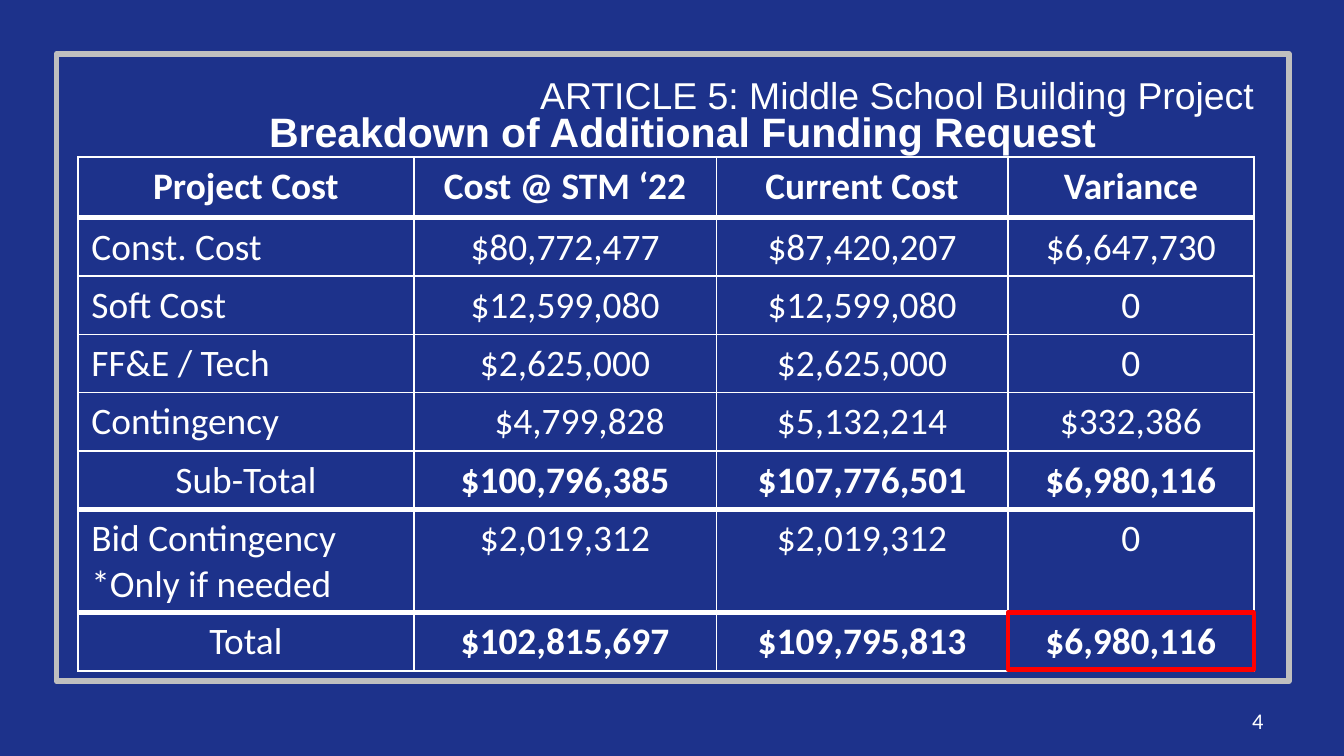
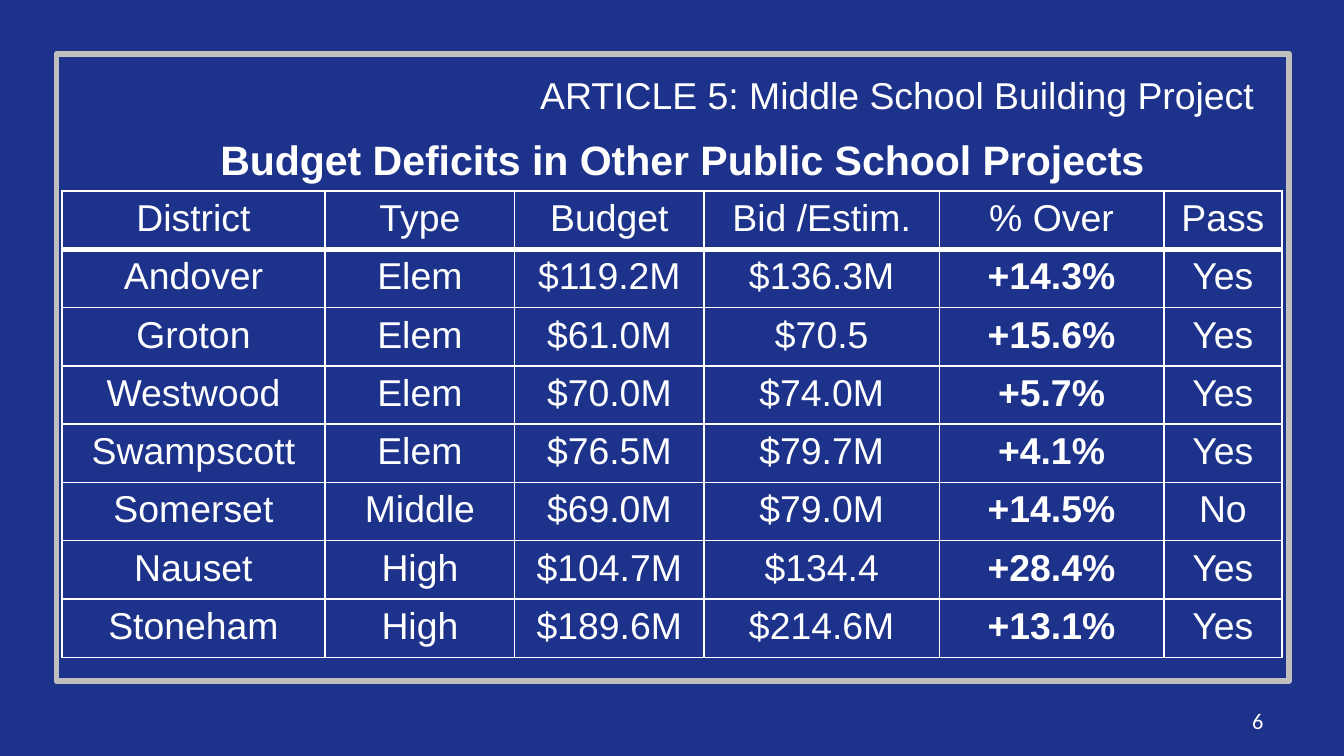
from dataclasses import dataclass
from typing import NamedTuple

from lxml.etree import SubElement
from pptx import Presentation
from pptx.dml.color import RGBColor
from pptx.enum.shapes import MSO_SHAPE
from pptx.enum.text import MSO_ANCHOR, PP_ALIGN
from pptx.oxml.ns import qn
from pptx.slide import Slide
from pptx.table import _Cell
from pptx.util import Inches, Pt

COLORS = {"navy": "1D328B", "white": "FFFFFF", "frame": "BFBFBF", "red": "FF0000"}
ARTICLE = "ARTICLE 5: Middle School Building Project"
THIN, THICK = Pt(1), Pt(3)


class Box(NamedTuple):
    left: float
    top: float
    width: float
    height: float


class TextStyle(NamedTuple):
    font: str
    size: int
    bold: bool = False
    align: PP_ALIGN = PP_ALIGN.CENTER
    anchor: MSO_ANCHOR = MSO_ANCHOR.MIDDLE


TITLE = TextStyle("Arial", 22, bold=True)
ARTICLE_STYLE = TextStyle("Arial", 20, align=PP_ALIGN.LEFT, anchor=MSO_ANCHOR.TOP)
NUMBER = TextStyle("Calibri", 12, align=PP_ALIGN.RIGHT)


@dataclass(frozen=True)
class TableSpec:
    left: float
    top: float
    columns: list[float]
    heights: list[float]
    rows: list[list[str]]
    font: str
    thick_below: frozenset[int] = frozenset({0})  # rows with a heavy bottom rule
    bold_cells: frozenset[tuple[int, int]] = frozenset()
    left_cells: frozenset[tuple[int, int]] = frozenset()
    indented_cells: frozenset[tuple[int, int]] = frozenset()


@dataclass(frozen=True)
class PageSpec:
    number: int
    title: str
    title_top: float
    table: TableSpec
    highlight: Box | None = None


def color(name: str) -> RGBColor:
    return RGBColor.from_string(COLORS[name])


def add_outline(page: Slide, box: Box, line_color: str, width: float) -> None:
    outline = page.shapes.add_shape(MSO_SHAPE.RECTANGLE, *map(Inches, box))
    outline.shadow.inherit = False
    outline.fill.background()
    outline.line.color.rgb = color(line_color)
    outline.line.width = Pt(width)


def write(frame, text: str, style: TextStyle) -> None:
    frame.text = text
    for para in frame.paragraphs:
        para.alignment = style.align
        para.font.name = style.font
        para.font.size = Pt(style.size)
        para.font.bold = style.bold
        para.font.color.rgb = color("white")


def add_text(page: Slide, box: Box, text: str, style: TextStyle) -> None:
    frame = page.shapes.add_textbox(*map(Inches, box)).text_frame
    frame.word_wrap = True
    frame.vertical_anchor = style.anchor
    write(frame, text, style)


def set_borders(cell: _Cell, top: int, bottom: int) -> None:
    properties = cell._tc.get_or_add_tcPr()
    for side, width in (("L", THIN), ("R", THIN), ("T", top), ("B", bottom)):
        line = SubElement(properties, qn(f"a:ln{side}"), w=str(width))
        fill = SubElement(line, qn("a:solidFill"))
        SubElement(fill, qn("a:srgbClr"), val=COLORS["white"])


def add_table(page: Slide, spec: TableSpec) -> None:
    box = Box(spec.left, spec.top, sum(spec.columns), sum(spec.heights))
    table = page.shapes.add_table(
        len(spec.rows), len(spec.columns), *map(Inches, box)).table
    table.first_row = table.horz_banding = False
    for column, width in zip(table.columns, spec.columns):
        column.width = Inches(width)
    for row, height in zip(table.rows, spec.heights):
        row.height = Inches(height)

    for r, values in enumerate(spec.rows):
        top = THICK if r - 1 in spec.thick_below else THIN
        bottom = THICK if r in spec.thick_below else THIN
        for c, value in enumerate(values):
            cell = table.cell(r, c)
            to_left = (r, c) in spec.left_cells | spec.indented_cells
            align = PP_ALIGN.LEFT if to_left else PP_ALIGN.CENTER
            bold = (r, c) in spec.bold_cells
            write(cell.text_frame, value, TextStyle(spec.font, 20, bold, align))
            if (r, c) in spec.indented_cells:
                para = cell.text_frame.paragraphs[0]
                para._p.get_or_add_pPr().set("marL", str(Inches(0.5)))
            set_borders(cell, top, bottom)
            cell.fill.background()


def add_page(deck, spec: PageSpec) -> None:
    page = deck.slides.add_slide(deck.slide_layouts[6])
    add_outline(page, Box(0.42, 0.4, 9.17, 4.67), "frame", 3)
    add_text(page, Box(0.83, spec.title_top, 8.5, 0.53), spec.title, TITLE)
    add_text(page, Box(7.17, 5.21, 2.33, 0.3), str(spec.number), NUMBER)
    add_text(page, Box(3.92, 0.49, 5.58, 0.44), ARTICLE, ARTICLE_STYLE)
    add_table(page, spec.table)
    if spec.highlight:
        add_outline(page, spec.highlight, "red", 2.5)


# Project costs: header and sums are bold, item names sit left
COSTS = TableSpec(
    left=0.58, top=1.17, font="Calibri",
    columns=[2.5, 2.25, 2.17, 1.83],
    heights=[0.45] + [0.43] * 5 + [0.76, 0.43],
    rows=[
        ["Project Cost", "Cost @ STM ‘22", "Current Cost", "Variance"],
        ["Const. Cost", "$80,772,477", "$87,420,207", "$6,647,730"],
        ["Soft Cost", "$12,599,080", "$12,599,080", "0"],
        ["FF&E / Tech", "$2,625,000", "$2,625,000", "0"],
        ["Contingency", "$4,799,828", "$5,132,214", "$332,386"],
        ["Sub-Total", "$100,796,385", "$107,776,501", "$6,980,116"],
        ["Bid Contingency\n*Only if needed", "$2,019,312", "$2,019,312", "0"],
        ["Total", "$102,815,697", "$109,795,813", "$6,980,116"],
    ],
    thick_below=frozenset({0, 5, 6}),
    bold_cells=frozenset({(0, 0)} | {(r, c) for r in (0, 5, 7) for c in (1, 2, 3)}),
    left_cells=frozenset((r, 0) for r in (1, 2, 3, 4, 6)),
    indented_cells=frozenset({(4, 1)}),
)

# Other districts: the overrun column is bold below its header
DISTRICTS = TableSpec(
    left=0.46, top=1.42, font="Arial",
    columns=[1.96, 1.41, 1.41, 1.75, 1.67, 0.88],
    heights=[3.47 / 8] * 8,
    rows=[
        ["District", "Type", "Budget", "Bid /Estim.", "% Over", "Pass"],
        ["Andover", "Elem", "$119.2M", "$136.3M", "+14.3%", "Yes"],
        ["Groton", "Elem", "$61.0M", "$70.5", "+15.6%", "Yes"],
        ["Westwood", "Elem", "$70.0M", "$74.0M", "+5.7%", "Yes"],
        ["Swampscott", "Elem", "$76.5M", "$79.7M", "+4.1%", "Yes"],
        ["Somerset", "Middle", "$69.0M", "$79.0M", "+14.5%", "No"],
        ["Nauset", "High", "$104.7M", "$134.4", "+28.4%", "Yes"],
        ["Stoneham", "High", "$189.6M", "$214.6M", "+13.1%", "Yes"],
    ],
    bold_cells=frozenset((r, 4) for r in range(1, 8)),
)

PAGES = [
    PageSpec(4, "Breakdown of Additional Funding Request", 0.71, COSTS,
             highlight=Box(7.5, 4.56, 1.83, 0.42)),
    PageSpec(6, "Budget Deficits in Other Public School Projects", 0.92, DISTRICTS),
]


def main() -> None:
    deck = Presentation()
    # Widescreen, 16 to 9
    deck.slide_width, deck.slide_height = Inches(10), Inches(10 * 9 / 16)
    # Shared background
    background = deck.slide_master.background.fill
    background.solid()
    background.fore_color.rgb = color("navy")
    for spec in PAGES:
        add_page(deck, spec)
    deck.save("out.pptx")


if __name__ == "__main__":
    main()
